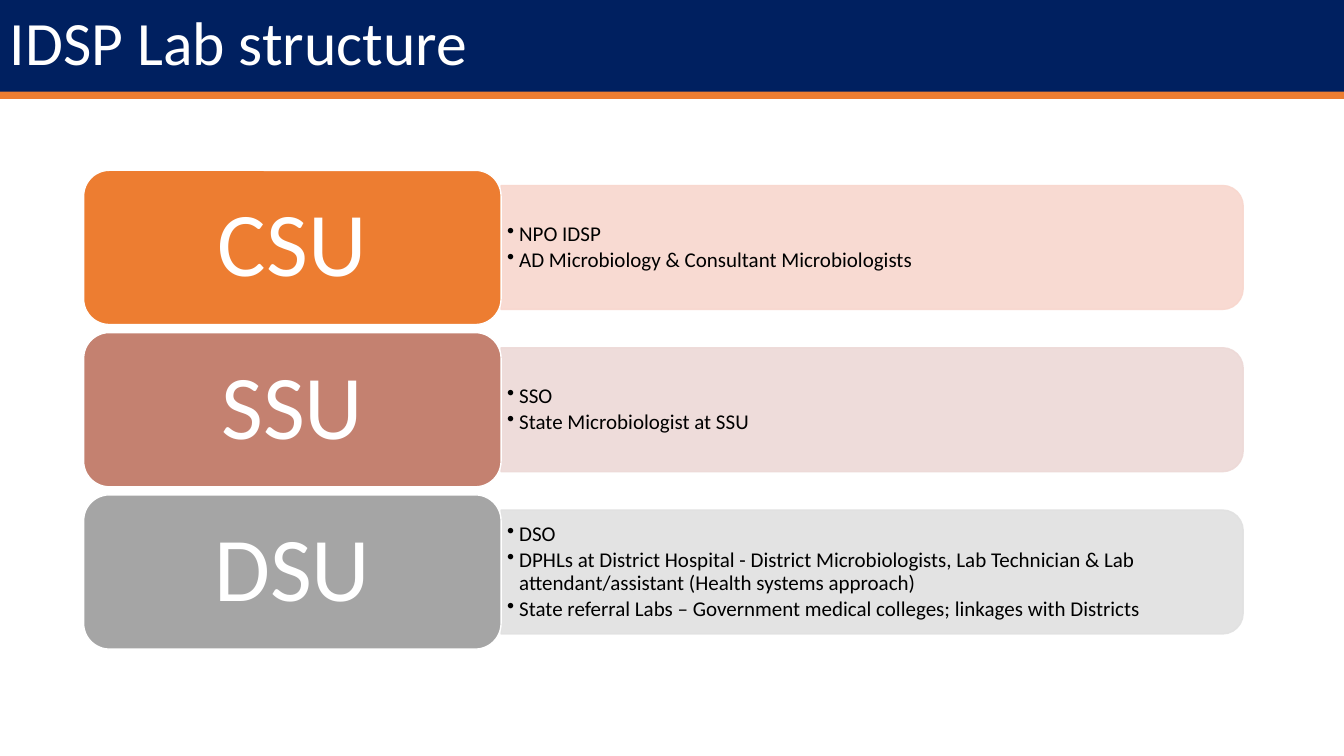
from lxml import etree
from pptx import Presentation
from pptx.dml.color import RGBColor
from pptx.enum.shapes import MSO_SHAPE as Preset
from pptx.enum.text import MSO_ANCHOR as Anchor, PP_ALIGN as Align
from pptx.oxml.ns import qn
from pptx.util import Inches, Pt

# Content: label, label colour, panel colour, bullet points
TITLE = "IDSP Lab structure"
UNITS = [
    ("CSU", "ED7D31", "F8D7CE",
     ["NPO IDSP", "AD Microbiology & Consultant Microbiologists"]),
    ("SSU", "C48170", "EDD9D7",
     ["SSO", "State Microbiologist at SSU"]),
    ("DSU", "A5A5A5", "E1E1E1",
     ["DSO",
      "DPHLs at District Hospital - District Microbiologists, Lab Technician "
      "& Lab attendant/assistant (Health systems approach)",
      "State referral Labs – Government medical colleges; linkages with Districts"]),
]
FONT, NAVY, ORANGE, WHITE, BLACK = "Calibri", "002060", "ED7D31", "FFFFFF", "000000"

# Layout in inches
SLIDE_W, SLIDE_H = 13.33, 7.5
TITLE_H, STRIPE_H = 0.91, 0.07
ROW_LEFT, ROW_TOP, ROW_STEP = 0.83, 1.69, 1.61
LABEL_W, LABEL_H = 4.14, 1.53
PANEL_W, PANEL_H = 7.36, 1.23
BULLETS_W, BULLETS_H = 7.3, 1.11
BULLET_INDENT = 0.12


def color(value):
    return RGBColor.from_string(value)


def add_box(preset, left, top, width, height, fill, line=None):
    shape = slide.shapes.add_shape(
        preset, Inches(left), Inches(top), Inches(width), Inches(height))
    shape.shadow.inherit = False
    shape.fill.solid()
    shape.fill.fore_color.rgb = color(fill)
    if line:
        shape.line.color.rgb = color(line)
        shape.line.width = Pt(1)
    else:
        shape.line.fill.background()
    return shape


def set_text(shape, lines, size, font_color, align, insets, space_after=0):
    frame = shape.text_frame
    frame.word_wrap = True
    frame.vertical_anchor = Anchor.MIDDLE
    frame.margin_left = frame.margin_right = Inches(insets[0])
    frame.margin_top = frame.margin_bottom = Inches(insets[1])
    frame.text = "\n".join(lines)
    for paragraph in frame.paragraphs:
        paragraph.alignment = align
        paragraph.line_spacing = 0.9
        paragraph.space_after = Pt(space_after)
        paragraph.font.name = FONT
        paragraph.font.size = Pt(size)
        paragraph.font.color.rgb = color(font_color)
    return frame


def add_bullet(paragraph):
    properties = paragraph._p.get_or_add_pPr()
    properties.set("marL", str(Inches(BULLET_INDENT)))
    properties.set("indent", str(-Inches(BULLET_INDENT)))
    bullet = etree.Element(qn("a:buChar"), char="•")
    properties.find(qn("a:defRPr")).addprevious(bullet)


def set_opacity(shape, percent):
    for rgb in shape._element.spPr.iter(qn("a:srgbClr")):
        etree.SubElement(rgb, qn("a:alpha"), val=str(percent * 1000))


presentation = Presentation()
presentation.slide_width, presentation.slide_height = Inches(SLIDE_W), Inches(SLIDE_H)
slide = presentation.slides.add_slide(presentation.slide_layouts[6])

# Title band with its stripe
add_box(Preset.RECTANGLE, 0, TITLE_H, SLIDE_W, STRIPE_H, ORANGE, ORANGE)
title = add_box(Preset.RECTANGLE, 0, 0, SLIDE_W, TITLE_H, NAVY)
set_text(title, [TITLE], 44, WHITE, Align.LEFT, (0.1, 0.05))

# One row per unit: panel, bullet points, label
label_right = ROW_LEFT + LABEL_W
for row, (name, label_color, panel_color, points) in enumerate(UNITS):
    top = ROW_TOP + row * ROW_STEP
    middle = top + LABEL_H / 2

    # The panel is upright before its quarter turn
    panel = add_box(Preset.ROUND_2_SAME_RECTANGLE,
                    label_right + (PANEL_W - PANEL_H) / 2, middle - PANEL_W / 2,
                    PANEL_H, PANEL_W, panel_color, panel_color)
    panel.rotation = 90
    set_opacity(panel, 90)

    bullets = slide.shapes.add_textbox(
        Inches(label_right), Inches(middle - BULLETS_H / 2),
        Inches(BULLETS_W), Inches(BULLETS_H))
    frame = set_text(bullets, points, 15, BLACK, Align.LEFT, (0.06, 0.03), 2.25)
    for paragraph in frame.paragraphs:
        add_bullet(paragraph)

    label = add_box(Preset.ROUNDED_RECTANGLE, ROW_LEFT, top,
                    LABEL_W, LABEL_H, label_color, WHITE)
    set_text(label, [name], 65, WHITE, Align.CENTER, (0.27, 0.14))

presentation.save("out.pptx")
